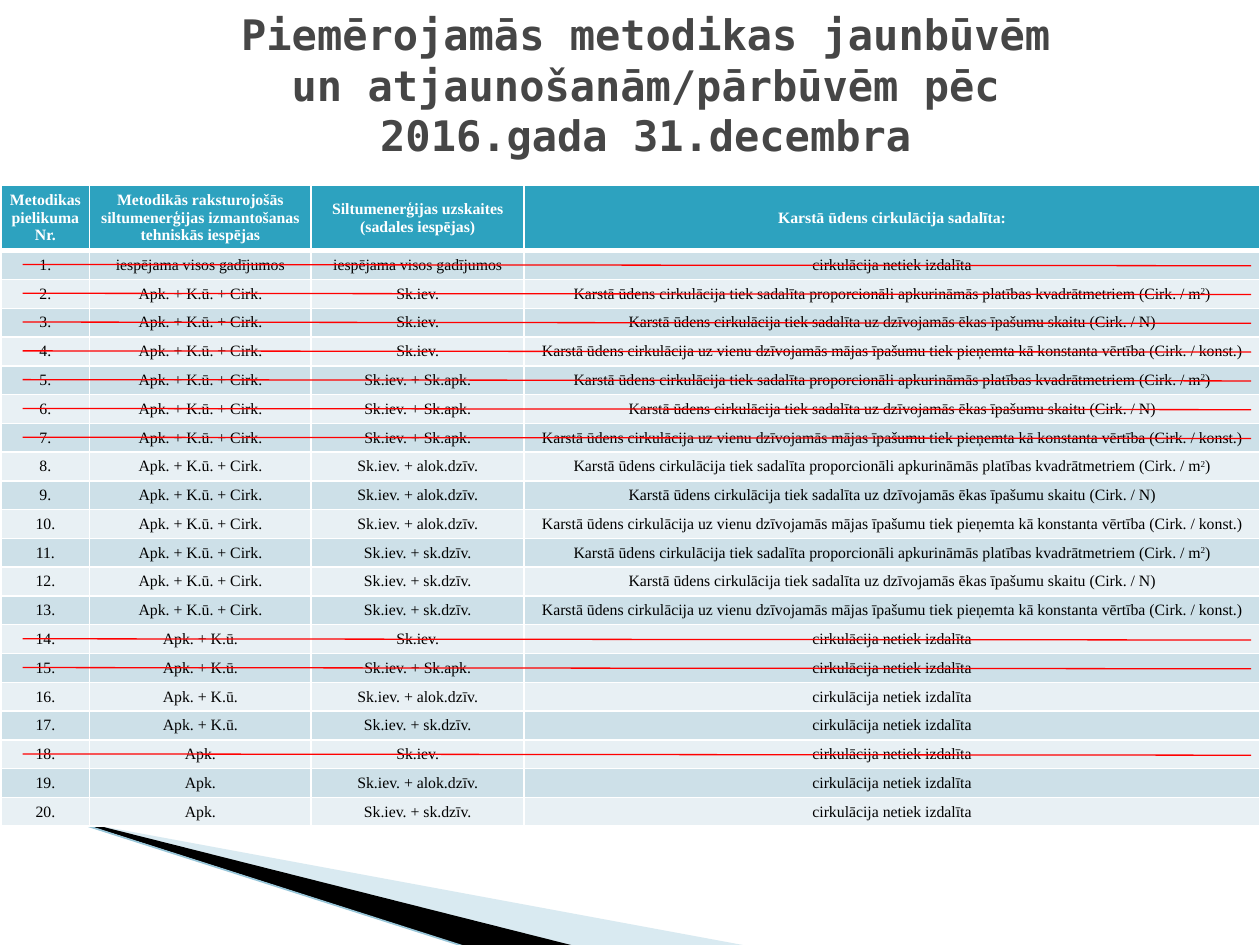
import pptx
import pptx.dml.color
import pptx.enum.shapes
import pptx.enum.text
import pptx.oxml
import pptx.oxml.ns
import pptx.util
from lxml import etree

COLUMNS, ROWS = 1000, 750
UNIT = pptx.util.Inches(10) // COLUMNS
COLORS = {
    "title": "464646", "header": "2DA2BF", "odd": "CDE0E8", "even": "E8F0F4",
    "white": "FFFFFF", "black": "000000", "strike": "FF0000",
    "wing": "A0CBDC", "edge": "97C5D8",
}
TITLE_BOX = (160, 8, 705, 118)
TABLE_BOX = (1, 147, 999, 509)
DECOR_BOX = (0, 633, 595, 119)
COLUMN_WIDTHS = (70, 176, 169, 584)
HEADER_HEIGHT = 52
STRUCK_ROWS = (1, 2, 3, 4, 5, 6, 7, 14, 15, 18)

TITLE = "Piemērojamās metodikas jaunbūvēm un atjaunošanām/pārbūvēm pēc 2016.gada 31.decembra"
HEADERS = (
    "Metodikas pielikuma Nr.",
    "Metodikās raksturojošās siltumenerģijas izmantošanas tehniskās iespējas",
    "Siltumenerģijas uzskaites (sadales iespējas)",
    "Karstā ūdens cirkulācija sadalīta:",
)
ANY_CASE = "iespējama visos gadījumos"
NOT_SPLIT = "cirkulācija netiek izdalīta"
METERING = ("Sk.iev.", "Sk.iev. + Sk.apk.", "Sk.iev. + alok.dzīv.", "Sk.iev. + sk.dzīv.")
SPLITS = (
    "Karstā ūdens cirkulācija tiek sadalīta proporcionāli apkurināmās platības kvadrātmetriem (Cirk. / m^2^)",
    "Karstā ūdens cirkulācija tiek sadalīta uz dzīvojamās ēkas īpašumu skaitu (Cirk. / N)",
    "Karstā ūdens cirkulācija uz vienu dzīvojamās mājas īpašumu tiek pieņemta kā konstanta vērtība (Cirk. / konst.)",
)


def method_rows():
    """Return the numbered methods as rows of cell texts."""
    methods = [(ANY_CASE, ANY_CASE, NOT_SPLIT)]
    methods += [("Apk. + K.ū. + Cirk.", meter, split) for meter in METERING for split in SPLITS]
    methods += [("Apk. + K.ū.", meter, NOT_SPLIT) for meter in METERING]
    methods += [("Apk.", METERING[index], NOT_SPLIT) for index in (0, 2, 3)]
    return [(f"{number}.", *method) for number, method in enumerate(methods, 1)]


def rgb(name):
    """Look up a named colour."""
    return pptx.dml.color.RGBColor.from_string(COLORS[name])


def grid(*lengths):
    """Turn grid units into slide lengths."""
    return [pptx.util.Emu(round(length * UNIT)) for length in lengths]


def format_paragraph(para, name, size, color, bold):
    """Centre a paragraph and set its font."""
    para.alignment = pptx.enum.text.PP_ALIGN.CENTER
    para.font.name = name
    para.font.size = pptx.util.Pt(size)
    para.font.bold = bold
    para.font.color.rgb = rgb(color)


def add_title(page, box):
    """Place the title placeholder in the box."""
    title = page.shapes.title
    title.left, title.top, title.width, title.height = grid(*box)
    frame = title.text_frame
    frame.text = TITLE
    frame.word_wrap = True
    frame.auto_size = pptx.enum.text.MSO_AUTO_SIZE.NONE
    frame.vertical_anchor = pptx.enum.text.MSO_ANCHOR.MIDDLE
    format_paragraph(frame.paragraphs[0], "DejaVu Sans Mono", 24, "title", True)


def add_line(page, start, end, color, width):
    """Draw a straight line without a shadow."""
    line = page.shapes.add_connector(
        pptx.enum.shapes.MSO_CONNECTOR.STRAIGHT, *grid(*start, *end))
    line.line.color.rgb = rgb(color)
    line.line.width = pptx.util.Pt(width)
    etree.SubElement(line._element.spPr, pptx.oxml.ns.qn("a:effectLst"))


def add_wing(page, points, color, opacity=100):
    """Draw a filled outline through the points."""
    corners = [grid(*point) for point in points]
    builder = page.shapes.build_freeform(*corners[0])
    builder.add_line_segments(corners[1:], close=True)
    wing = builder.convert_to_shape()
    wing.shadow.inherit = False
    wing.line.fill.background()
    wing.fill.solid()
    wing.fill.fore_color.rgb = rgb(color)
    if opacity < 100:
        tone = wing._element.spPr.find(".//" + pptx.oxml.ns.qn("a:srgbClr"))
        etree.SubElement(tone, pptx.oxml.ns.qn("a:alpha"), val=str(opacity * 1000))


def add_decor(page, box):
    """Draw the corner wings and their edge line."""
    left, top, width, height = box
    right, bottom = left + width, top + height
    add_wing(page, [(left + 55, top + 18), (right, bottom - 1),
                    (right - 139, bottom - 1), (left + 55, top + 17)], "wing", 40)
    add_wing(page, [(left + 53, top + 16), (right - 138, bottom - 1),
                    (right - 223, bottom), (left + 54, top + 17)], "black")
    add_line(page, (left - 1, top), (right - 224, bottom), "edge", 0.95)


def add_border(cell, side, width):
    """Give one side of a cell a white border."""
    border = pptx.oxml.parse_xml(
        f'<a:{side} {pptx.oxml.ns.nsdecls("a")} w="{pptx.util.Pt(width)}"><a:solidFill>'
        f'<a:srgbClr val="{COLORS["white"]}"/></a:solidFill></a:{side}>')
    cell._tc.get_or_add_tcPr().append(border)


def fill_cell(cell, text, fill, header):
    """Write and format one table cell, raising text between carets."""
    para = cell.text_frame.paragraphs[0]
    format_paragraph(para, "Times New Roman", 9, "white" if header else "black", header)
    for index, part in enumerate(text.split("^")):
        span = para.add_run()
        span.text = part
        if index % 2:
            span._r.get_or_add_rPr().set("baseline", "30000")
    cell.margin_left, cell.margin_right, cell.margin_top, cell.margin_bottom = grid(6, 6, 0, 0)
    cell.vertical_anchor = pptx.enum.text.MSO_ANCHOR.MIDDLE
    for side in ("lnL", "lnR", "lnT", "lnB"):
        add_border(cell, side, 3 if header and side == "lnB" else 1)
    cell.fill.solid()
    cell.fill.fore_color.rgb = rgb(fill)


def add_methods(page, box):
    """Build the methods table and strike out the rows no longer used."""
    left, top, width, height = box
    rows = [HEADERS, *method_rows()]
    row_height = (height - HEADER_HEIGHT) / (len(rows) - 1)
    table = page.shapes.add_table(len(rows), len(HEADERS), *grid(*box)).table
    for column, column_width in zip(table.columns, grid(*COLUMN_WIDTHS)):
        column.width = column_width
    for number, texts in enumerate(rows):
        header = number == 0
        table.rows[number].height = grid(HEADER_HEIGHT if header else row_height)[0]
        fill = "header" if header else "odd" if number % 2 else "even"
        for index, text in enumerate(texts):
            fill_cell(table.cell(number, index), text, fill, header)
    for number in STRUCK_ROWS:
        middle = top + HEADER_HEIGHT + (number - 0.5) * row_height
        add_line(page, (left + 17, middle - 0.5), (left + width - 7, middle + 0.5), "strike", 0.75)


def main():
    """Build and save the slide."""
    deck = pptx.Presentation()
    deck.slide_width, deck.slide_height = grid(COLUMNS, ROWS)
    page = deck.slides.add_slide(deck.slide_layouts.get_by_name("Title Only"))
    add_decor(page, DECOR_BOX)
    add_title(page, TITLE_BOX)
    add_methods(page, TABLE_BOX)
    deck.save("out.pptx")


if __name__ == "__main__":
    main()
